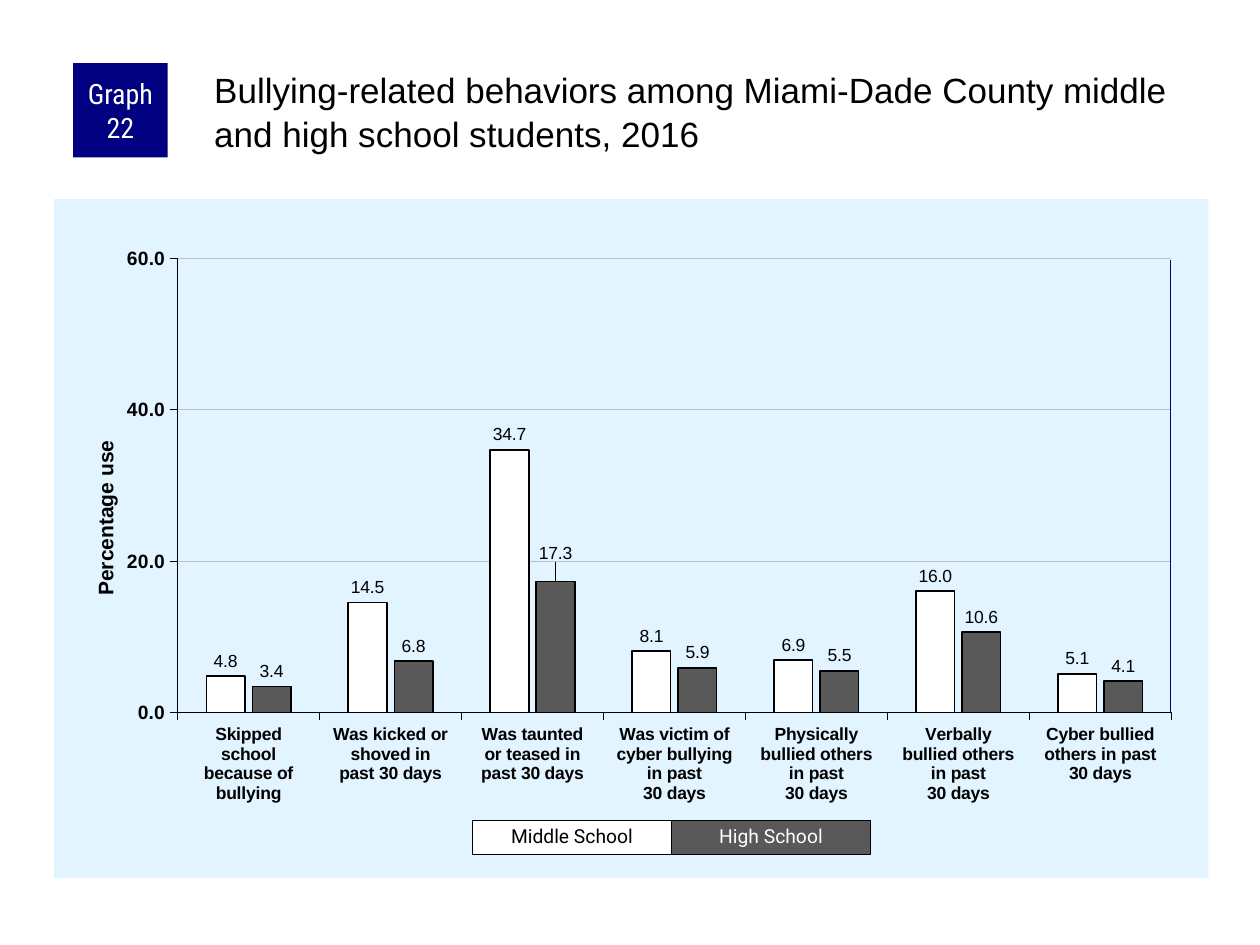
import lxml.etree
import pptx
import pptx.chart.data
import pptx.dml.color
import pptx.enum.chart
import pptx.enum.shapes
import pptx.enum.text
import pptx.oxml
import pptx.oxml.ns
import pptx.util

Inches = pptx.util.Inches
Pt = pptx.util.Pt
RGB = pptx.dml.color.RGBColor
qn = pptx.oxml.ns.qn

BLACK = RGB(0x00, 0x00, 0x00)
WHITE = RGB(0xFF, 0xFF, 0xFF)
NAVY = RGB(0x00, 0x00, 0x80)
GRAY = RGB(0x59, 0x59, 0x59)
SILVER = RGB(0xC0, 0xC0, 0xC0)
PALE = RGB(0xE1, 0xF4, 0xFF)

GROUPS = [
    "Skipped\nschool\nbecause of\nbullying",
    "Was kicked or\nshoved in\npast 30 days",
    "Was taunted\nor teased in\npast 30 days",
    "Was victim of\ncyber bullying\nin past\n30 days",
    "Physically\nbullied others\nin past\n30 days",
    "Verbally\nbullied others\nin past\n30 days",
    "Cyber bullied\nothers in past\n30 days",
]
# Name, values, bar colour, legend text colour
SERIES = [
    ("Middle School", (4.8, 14.5, 34.7, 8.1, 6.9, 16.0, 5.1), WHITE, BLACK),
    ("High School", (3.4, 6.8, 17.3, 5.9, 5.5, 10.6, 4.1), GRAY, WHITE),
]


def place(node, index, **parts):
    """Give a chart part a manual layout, as its child number index."""
    for old in node.findall(qn("c:layout")):
        node.remove(old)
    layout = lxml.etree.Element(qn("c:layout"))
    manual = lxml.etree.SubElement(layout, qn("c:manualLayout"))
    for name, value in parts.items():
        lxml.etree.SubElement(manual, qn("c:" + name)).set("val", str(value))
    node.insert(index, layout)


class Deck:
    def __init__(self):
        self.prs = pptx.Presentation()
        self.prs.slide_width, self.prs.slide_height = Inches(10), Inches(7.5)
        self.slide = self.prs.slides.add_slide(self.prs.slide_layouts[5])

    def font(self, font, size, color=BLACK, name="Arial", bold=False):
        font.size, font.name, font.bold = Pt(size), name, bold
        font.color.rgb = color

    def line(self, line, color, width):
        line.color.rgb, line.width = color, Pt(width)

    def title(self, text, x, y, w, h):
        box = self.slide.shapes.title
        box.left, box.top, box.width, box.height = map(Inches, (x, y, w, h))
        frame = box.text_frame
        frame.text = text
        frame.word_wrap = True
        frame.auto_size = pptx.enum.text.MSO_AUTO_SIZE.NONE
        frame.vertical_anchor = pptx.enum.text.MSO_ANCHOR.TOP
        frame.margin_left = frame.margin_top = Inches(0.03)
        frame.margin_right = frame.margin_bottom = 0
        para = frame.paragraphs[0]
        para.alignment = pptx.enum.text.PP_ALIGN.LEFT
        para.line_spacing = 1.05
        self.font(para.runs[0].font, 20)

    def box(self, text, x, y, w, h, fill, color, name, size, edge=None, space=1.0):
        shape = self.slide.shapes.add_shape(
            pptx.enum.shapes.MSO_SHAPE.RECTANGLE, *map(Inches, (x, y, w, h)))
        shape.shadow.inherit = False
        shape.fill.solid()
        shape.fill.fore_color.rgb = fill
        if edge is None:
            shape.line.fill.background()
        else:
            self.line(shape.line, edge, 0.75)
        frame = shape.text_frame
        frame.text = text
        frame.word_wrap = True
        frame.vertical_anchor = pptx.enum.text.MSO_ANCHOR.MIDDLE
        frame.margin_left = frame.margin_right = Inches(0.05)
        frame.margin_top = frame.margin_bottom = 0
        para = frame.paragraphs[0]
        para.alignment = pptx.enum.text.PP_ALIGN.CENTER
        para.line_spacing = space
        self.font(para.runs[0].font, size, color, name)

    def rule(self, x1, y1, x2, y2, color, width):
        rule = self.slide.shapes.add_connector(
            pptx.enum.shapes.MSO_CONNECTOR.STRAIGHT,
            *map(Inches, (x1, y1, x2, y2)))
        self.line(rule.line, color, width)
        lxml.etree.SubElement(rule.line._get_or_add_ln().getparent(),
                              qn("a:effectLst"))

    def chart(self, x, y, w, h):
        data = pptx.chart.data.CategoryChartData(number_format="0.0")
        data.categories = GROUPS
        for name, values, *_ in SERIES:
            data.add_series(name, values)
        chart = self.slide.shapes.add_chart(
            pptx.enum.chart.XL_CHART_TYPE.COLUMN_CLUSTERED,
            *map(Inches, (x, y, w, h)), data).chart
        chart.has_legend = chart.has_title = False
        self.font(chart.font, 11.5)

        # Background and plot area
        back = pptx.oxml.parse_xml(
            f'<c:spPr {pptx.oxml.ns.nsdecls("c", "a")}><a:solidFill>'
            f'<a:srgbClr val="{PALE}"/></a:solidFill>'
            '<a:ln><a:noFill/></a:ln></c:spPr>')
        root = chart.element.find(qn("c:chart"))
        root.addnext(back)
        place(root.find(qn("c:plotArea")), 0, layoutTarget="inner",
              xMode="edge", yMode="edge", x=0.107, y=0.087, w=0.861, h=0.669)

        # Axes
        cat, val = chart.category_axis, chart.value_axis
        for axis, size in ((cat, 10), (val, 11)):
            axis.major_tick_mark = pptx.enum.chart.XL_TICK_MARK.OUTSIDE
            self.font(axis.tick_labels.font, size, bold=True)
            self.line(axis.format.line, BLACK, 0.25)
        val.minimum_scale, val.maximum_scale, val.major_unit = 0, 60, 20
        val.tick_labels.number_format = "0.0"
        val.tick_labels.number_format_is_linked = False
        self.line(val.major_gridlines.format.line, SILVER, 0.25)
        frame = val.axis_title.text_frame
        frame.text = "Percentage use"
        self.font(frame.paragraphs[0].runs[0].font, 12, bold=True)
        place(val.axis_title._element, 1, xMode="edge", yMode="edge",
              x=0.03, y=0.35)

        # Bars and their labels
        plot = chart.plots[0]
        plot.vary_by_categories = False
        plot.gap_width, plot.overlap = 150, -20
        above = pptx.enum.chart.XL_LABEL_POSITION.OUTSIDE_END
        for series, (_, _, fill, _) in zip(plot.series, SERIES):
            series.format.fill.solid()
            series.format.fill.fore_color.rgb = fill
            self.line(series.format.line, BLACK, 1)
            labels = series.data_labels
            labels.show_value = True
            labels.number_format = "0.0"
            labels.number_format_is_linked = False
            labels.position = above
            self.font(labels.font, 10)

        # Lift the 17.3 label clear of the gridline
        label = plot.series[1].points[2].data_label
        self.font(label.font, 10)
        label.position = above
        node = plot.series[1].data_labels._element.find(qn("c:dLbl"))
        place(node, 1, x=0, y=-0.02)


def main():
    deck = Deck()

    # Chart with its right-hand border
    deck.chart(0.43, 1.58, 9.16, 5.39)
    deck.rule(9.29, 2.06, 9.29, 5.65, NAVY, 1)

    # Heading
    deck.box("Graph 22", 0.58, 0.5, 0.75, 0.75, NAVY, WHITE,
             "Roboto Condensed", 16)
    deck.title("Bullying-related behaviors among Miami-Dade County middle "
               "and high school students, 2016", 1.67, 0.5, 7.92, 0.83)

    # Legend
    wide = 1.58
    for i, (name, _, fill, color) in enumerate(SERIES):
        deck.box(name, 3.75 + i * wide, 6.51, wide, 0.27, fill, color,
                 "Roboto", 11, BLACK, 0.9)

    deck.prs.save("out.pptx")


if __name__ == "__main__":
    main()
